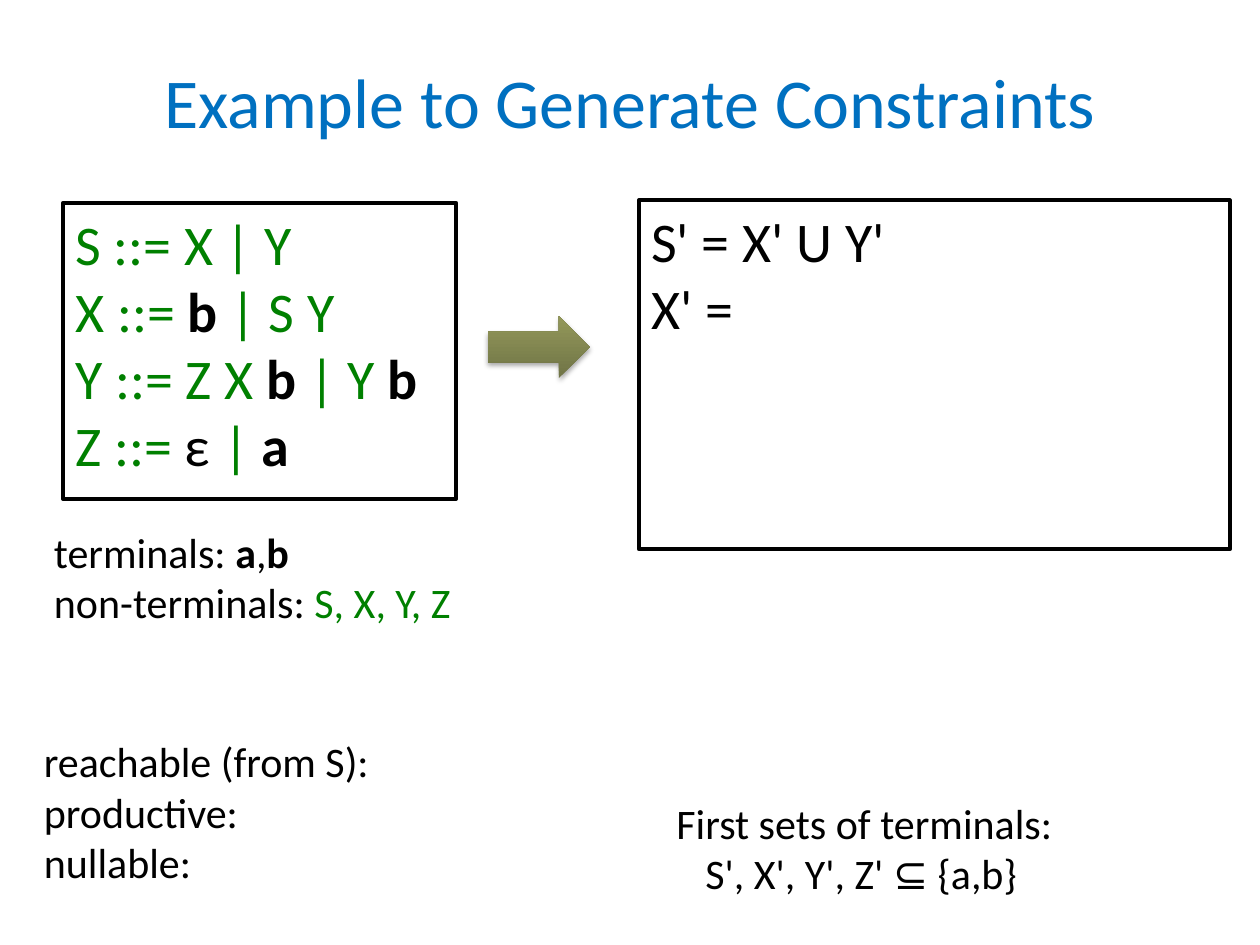
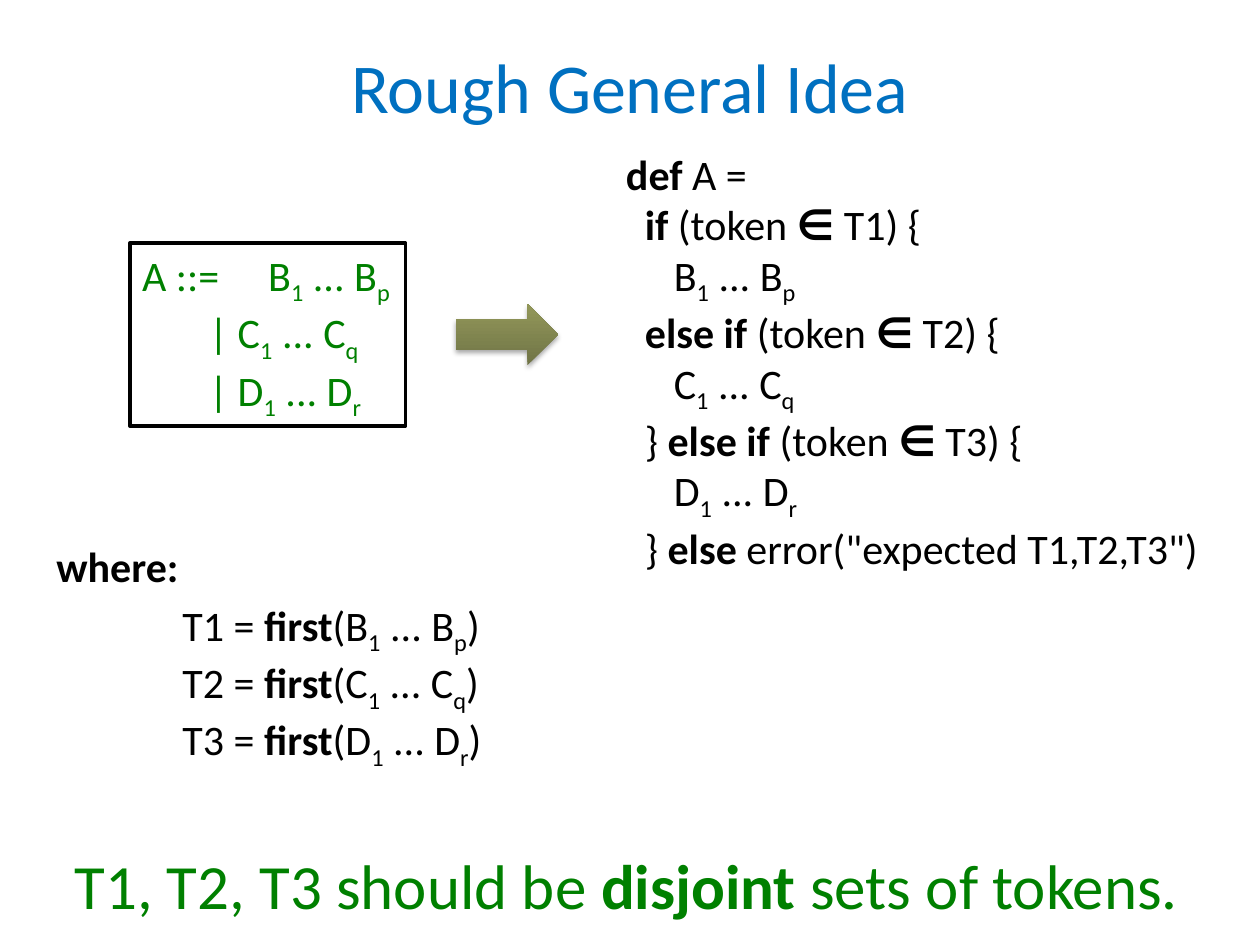
from lxml.etree import SubElement as Sub
from pptx import Presentation
from pptx.dml.color import RGBColor as Rgb
from pptx.enum.shapes import MSO_SHAPE as Kind
from pptx.enum.text import MSO_ANCHOR as Anchor, PP_ALIGN as Align
from pptx.oxml.ns import qn
from pptx.util import Inches, Pt

HUES = {"title": "0070C0", "rule": "008000", "ink": "000000",
        "paper": "FFFFFF", "dark": "707446", "light": "93985A"}
FONT = "Calibri"
CELL = Inches(0.25)
COLS, ROWS = 40, 30
PAGE = (0, 0, COLS, ROWS)


def hue(name):
    return Rgb.from_string(HUES[name])


def part(box, x, y, wide, high):
    """Return a box offset by x columns and y rows inside another."""
    return box[0] + x, box[1] + y, wide, high


def place(box):
    return [round(n * CELL) for n in box]


def split(line):
    """Yield (text, marks); * toggles bold, _ subscript, ~ the other colour."""
    marks, text = set(), ""
    for char in line:
        if char in "*_~":
            if text:
                yield text, frozenset(marks)
            marks ^= {char}
            text = ""
        else:
            text += char
    if text:
        yield text, frozenset(marks)


def write(shape, lines, size=24, color="ink", other="rule",
          align=Align.LEFT, anchor=Anchor.TOP, gap=0, stop=None):
    """Fill a shape with lines, each a string or an (indent in inches, string)."""
    frame = shape.text_frame
    frame.word_wrap = True
    frame.vertical_anchor = anchor
    for i, line in enumerate(lines):
        dent, text = line if isinstance(line, tuple) else (0, line)
        para = frame.add_paragraph() if i else frame.paragraphs[0]
        para.alignment = align
        para.space_before = Pt(gap if i == 1 else 0)
        props = para._p.get_or_add_pPr()
        props.set("marL", str(Inches(dent)))
        props.set("indent", "0")
        if stop:
            tabs = Sub(props, qn("a:tabLst"))
            Sub(tabs, qn("a:tab"), pos=str(Inches(stop)), algn="l")
        for piece, marks in split(text):
            run = para.add_run()
            run.text = piece
            font = run.font
            font.name, font.size = FONT, Pt(size)
            font.bold = "*" in marks
            font.color.rgb = hue(other if "~" in marks else color)
            if "_" in marks:
                run._r.get_or_add_rPr().set("baseline", "-25000")


def note(slide, box, lines, **form):
    write(slide.shapes.add_textbox(*place(box)), lines, **form)


def title(slide, box, text):
    note(slide, box, [text], size=40, color="title",
         align=Align.CENTER, anchor=Anchor.MIDDLE)


def panel(slide, box, lines, edge=2.25, fill=None, **form):
    rect = slide.shapes.add_shape(Kind.RECTANGLE, *place(box))
    rect.shadow.inherit = False
    if fill:
        rect.fill.solid()
        rect.fill.fore_color.rgb = hue(fill)
    else:
        rect.fill.background()
    rect.line.color.rgb = hue("ink")
    rect.line.width = Pt(edge)
    write(rect, lines, **form)


def arrow(slide, box, x, y):
    shape = slide.shapes.add_shape(
        Kind.RIGHT_ARROW, *place(part(box, x, y, 3.24, 1.96)))
    shape.line.fill.background()
    shape.fill.gradient()
    shape.fill.gradient_angle = 90
    for stop, name in zip(shape.fill.gradient_stops, ("dark", "light")):
        stop.color.rgb = hue(name)
    shape.shadow.inherit = False
    glow = Sub(shape.element.spPr.find(qn("a:effectLst")), qn("a:outerShdw"),
               blurRad=str(Pt(3.1)), dist=str(Pt(1.8)), dir="5400000",
               rotWithShape="0")
    tint = Sub(glow, qn("a:srgbClr"), val=HUES["ink"])
    Sub(tint, qn("a:alpha"), val="35000")


def sets(slide, box):
    """Place the grammar, its constraints and the notes below them."""
    title(slide, part(box, 2, 0.68, 36, 5), "Example to Generate Constraints")
    panel(slide, part(box, 2, 6.44, 12.48, 9.4),
          ["S ::= X | Y", "X ::= ~*b *~| S Y",
           "Y ::= Z X ~*b *~| Y ~*b", "Z ::= ~ε ~|~* a"],
          size=32, color="rule", other="ink")
    arrow(slide, box, 15.48, 10.04)
    panel(slide, part(box, 20.28, 6.36, 18.76, 11.08),
          ["S' = X' U Y'", "X' ="], size=32)
    note(slide, part(box, 1, 23.16, 17.44, 5.24),
         ["reachable (from S):", "productive:", "nullable:"])
    note(slide, part(box, 1.32, 16.52, 14.2, 3.64),
         ["terminals: *a*,*b", "non-terminals: ~S, X, Y, Z"])
    note(slide, part(box, 21.08, 25.12, 14.2, 3.64),
         ["First sets of terminals:", (0.23, "S', X', Y', Z' ⊆ {a,b}")])


def parser(slide, box):
    """Place the rule, the code made from it and the token sets."""
    title(slide, part(box, 2, 0.68, 36, 4.04), "Rough General Idea")
    seqs = [f"{name}_1_ ... {name}_{last}_" for name, last in ("Bp", "Cq", "Dr")]
    first, second, third = seqs
    panel(slide, part(box, 4.12, 7.72, 8.76, 5.8),
          [f"A ::=\t{first}"] + [(0.53, f"| {seq}") for seq in seqs[1:]],
          edge=2, fill="paper", color="rule", stop=0.74)
    step, deep = 0.15, 0.38
    note(slide, part(box, 19.48, 4.52, 20.16, 13.88),
         ["*def* A =",
          (step, "*if* (token *∈ *T1) {"), (deep, first),
          (step, "*else if* (token* ∈ *T2) {"), (deep, second),
          (step, "} *else if* (token* ∈ *T3) {"), (deep, third),
          (step, '} *else* error("expected T1,T2,T3")')])
    arrow(slide, box, 14.48, 9.64)
    note(slide, part(box, 1.4, 16.96, 36.96, 8.44),
         ["*where:"] + [(1, f"T{i} = *first*({seq})")
                        for i, seq in enumerate(seqs, 1)], gap=4.8)
    note(slide, part(box, 1.4, 26.68, 36.96, 3),
         ["T1, T2, T3 should be *disjoint *sets of tokens."],
         size=36, color="rule", align=Align.CENTER)


def main():
    deck = Presentation()
    deck.slide_width, deck.slide_height = COLS * CELL, ROWS * CELL
    for draw in (sets, parser):
        draw(deck.slides.add_slide(deck.slide_layouts[6]), PAGE)
    deck.save("out.pptx")


if __name__ == "__main__":
    main()
